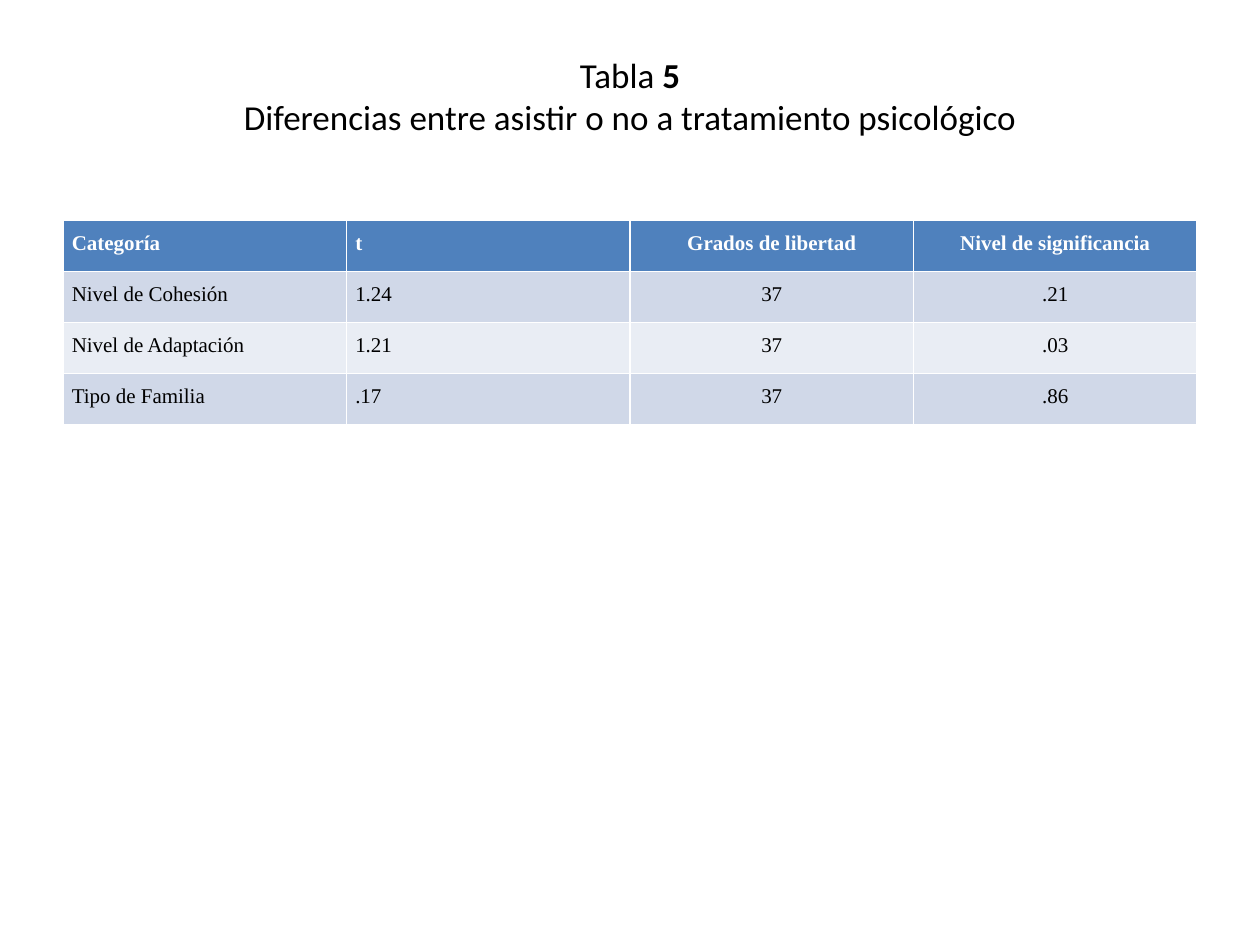
from pptx import Presentation
from pptx.dml.color import RGBColor
from pptx.enum.text import MSO_ANCHOR as Anchor, PP_ALIGN as Align
from pptx.util import Inches, Pt

TITLE_LINES = [
    [("Tabla ", False), ("5", True)],
    [("Diferencias entre asistir o no a tratamiento psicológico", False)],
]
RESULTS = [
    ["Categoría", "t", "Grados de libertad", "Nivel de significancia"],
    ["Nivel de Cohesión", "1.24", "37", ".21"],
    ["Nivel de Adaptación", "1.21", "37", ".03"],
    ["Tipo de Familia", ".17", "37", ".86"],
]
COLUMN_ALIGNS = [Align.LEFT, Align.LEFT, Align.CENTER, Align.CENTER]


def color(value):
    return RGBColor.from_string(value)


def apply(target, formats):
    for name, value in formats.items():
        setattr(target, name, value)


class SlideBuilder:
    title_font = {"name": "Calibri", "size": Pt(20)}
    table_font = {"name": "Times New Roman", "size": Pt(12)}
    cell_format = {
        "margin_left": Inches(0.07), "margin_right": Inches(0.07),
        "margin_top": 0, "margin_bottom": 0, "vertical_anchor": Anchor.TOP,
    }
    header_fill = "4F81BD"
    band_fills = ["D0D8E8", "E9EDF4"]
    header_text = "FFFFFF"
    body_text = "000000"

    def __init__(self, page):
        self.page = page

    def place(self, left, top, width, height):
        return {"left": Inches(left), "top": Inches(top),
                "width": Inches(width), "height": Inches(height)}

    def add_span(self, para, text, font, text_color, bold):
        span = para.add_run()
        span.text = text
        apply(span.font, {**font, "bold": bold})
        span.font.color.rgb = color(text_color)

    def title(self, lines, *bounds):
        box = self.page.shapes.title
        apply(box, self.place(*bounds))
        frame = box.text_frame
        apply(frame, {"vertical_anchor": Anchor.MIDDLE, "word_wrap": True,
                      "margin_bottom": Inches(0.39)})
        para = frame.paragraphs[0]
        para.alignment = Align.CENTER
        for index, line in enumerate(lines):
            if index:
                para.add_line_break()
            for text, bold in line:
                self.add_span(para, text, self.title_font, self.body_text, bold)

    def table(self, rows, aligns, *bounds):
        frame = self.page.shapes.add_table(
            len(rows), len(aligns), **self.place(*bounds))
        for row_index, row in enumerate(rows):
            header = row_index == 0
            fill = self.header_fill if header else self.band_fills[(row_index - 1) % 2]
            text_color = self.header_text if header else self.body_text
            for column_index, (text, align) in enumerate(zip(row, aligns)):
                cell = frame.table.cell(row_index, column_index)
                apply(cell, self.cell_format)
                cell.fill.solid()
                cell.fill.fore_color.rgb = color(fill)
                para = cell.text_frame.paragraphs[0]
                apply(para, {"alignment": align, "line_spacing": 1.5})
                self.add_span(para, text, self.table_font, text_color, header)


def main():
    deck = Presentation()
    apply(deck, {"slide_width": Inches(10), "slide_height": Inches(7.5)})
    builder = SlideBuilder(deck.slides.add_slide(deck.slide_layouts[5]))
    builder.title(TITLE_LINES, 0.5, 0.3, 9, 1.25)
    builder.table(RESULTS, COLUMN_ALIGNS, 0.5, 1.75, 9, 1.62)
    deck.save("out.pptx")


if __name__ == "__main__":
    main()
